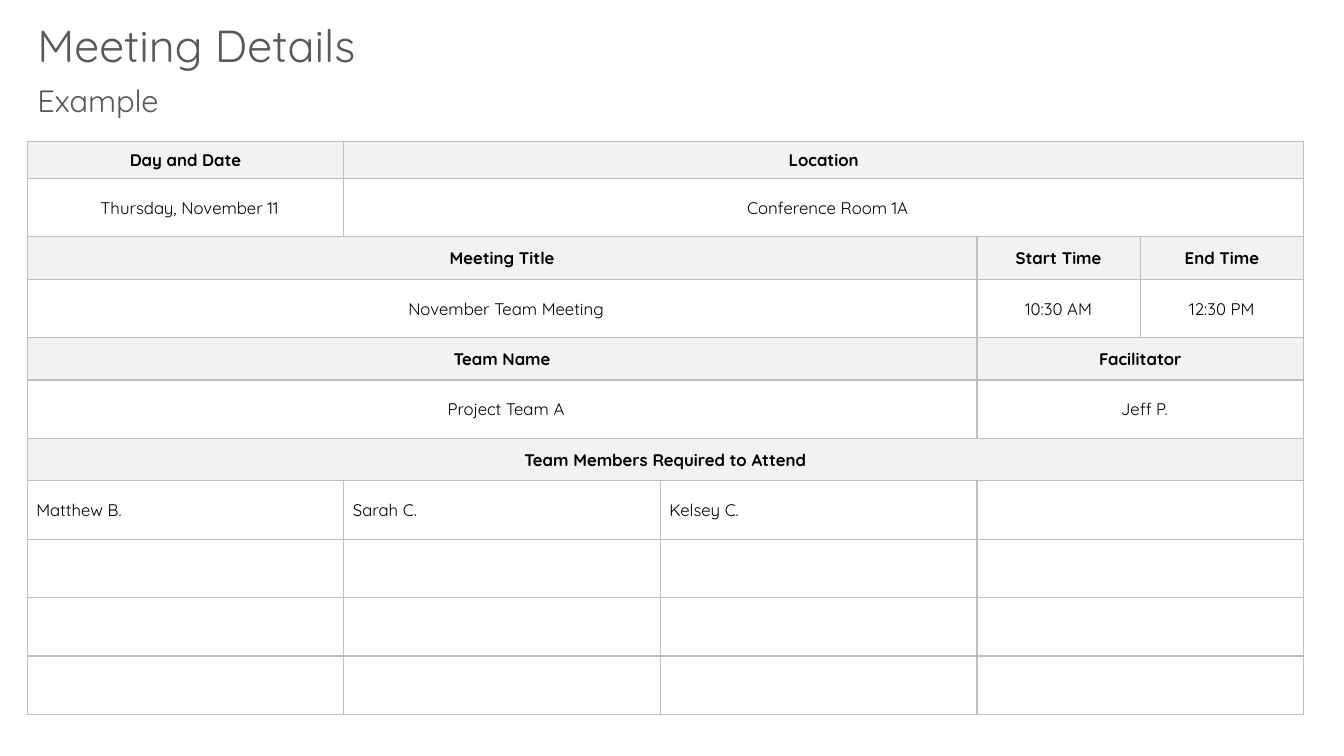
from collections import namedtuple
from dataclasses import dataclass

from lxml import etree
from pptx import Presentation
from pptx import util as u
from pptx.dml.color import RGBColor
from pptx.enum import text
from pptx.oxml.ns import qn

PX = 9144  # EMU in one px, at 100 px to the inch
CENTER, LEFT = text.PP_ALIGN.CENTER, text.PP_ALIGN.LEFT


@dataclass(frozen=True)
class Theme:
    font: str = "Quicksand"
    heading: str = "595959"
    ink: str = "000000"
    band: str = "F2F2F2"
    paper: str = "FFFFFF"
    rule: str = "BFBFBF"
    title_size: int = 32
    subtitle_size: int = 22
    cell_size: int = 12
    rule_width: int = 1


THEME = Theme()
Entry = namedtuple("Entry", "words span kind", defaults=(1, "value"))

COLUMNS = [314, 314, 314, 162, 162]
HEADER_HEIGHT, VALUE_HEIGHT, FIRST_HEIGHT = 42, 58, 37
OPEN_ROWS = 3


def header(words, span=1):
    return Entry(words, span, "header")


def member(words="", span=1):
    return Entry(words, span, "member")


def time(words):
    return Entry(words, 1, "time")


MEETING = [
    [header("Day and Date"), header("Location", 4)],
    [Entry("Thursday, November 11"), Entry("Conference Room 1A", 4)],
    [header("Meeting Title", 3), header("Start Time"), header("End Time")],
    [Entry("November Team Meeting", 3), time("10:30 AM"), time("12:30 PM")],
    [header("Team Name", 3), header("Facilitator", 2)],
    [Entry("Project Team A", 3), Entry("Jeff P.", 2)],
    [header("Team Members Required to Attend", 5)],
    [member("Matthew B."), member("Sarah C."), member("Kelsey C."), member(span=2)],
] + [[member(), member(), member(), member(span=2)]] * OPEN_ROWS


def px(length):
    return u.Emu(length * PX)


def write(frame, words, *, size, color, bold=False, align=LEFT):
    para = frame.paragraphs[0]
    para.alignment = align
    para.space_before = u.Pt(0)
    span = para.add_run()
    span.text = words
    span.font.name = THEME.font
    span.font.size = u.Pt(size)
    span.font.bold = bold
    span.font.color.rgb = RGBColor.from_string(color)


def fill_placeholder(box, words, size, *, left, top, width, height):
    box.left, box.top, box.width, box.height = map(px, (left, top, width, height))
    frame = box.text_frame
    frame.word_wrap = True
    frame.auto_size = text.MSO_AUTO_SIZE.NONE
    frame.vertical_anchor = text.MSO_ANCHOR.MIDDLE
    write(frame, words, size=size, color=THEME.heading)


def add_borders(cell):
    """Rule all four sides; the lines must precede the cell's fill."""
    properties = cell._tc.get_or_add_tcPr()
    for index, side in enumerate(("lnL", "lnR", "lnT", "lnB")):
        line = etree.Element(qn(f"a:{side}"), w=str(u.Pt(THEME.rule_width)))
        solid = etree.SubElement(line, qn("a:solidFill"))
        etree.SubElement(solid, qn("a:srgbClr"), val=THEME.rule)
        properties.insert(index, line)


def fill_cell(cell, entry):
    is_header = entry.kind == "header"
    cell.vertical_anchor = text.MSO_ANCHOR.MIDDLE
    cell.margin_left = px(1 if entry.kind in ("header", "time") else 9)
    cell.margin_top = cell.margin_right = px(1)
    cell.margin_bottom = 0
    cell.fill.solid()
    cell.fill.fore_color.rgb = RGBColor.from_string(
        THEME.band if is_header else THEME.paper)
    if entry.words:
        write(cell.text_frame, entry.words, size=THEME.cell_size, color=THEME.ink,
              bold=is_header, align=LEFT if entry.kind == "member" else CENTER)


def row_height(index, entries):
    if index == 0:
        return FIRST_HEIGHT
    return HEADER_HEIGHT if entries[0].kind == "header" else VALUE_HEIGHT


def add_meeting_table(page, rows, *, left, top):
    heights = [row_height(index, entries) for index, entries in enumerate(rows)]
    table = page.shapes.add_table(
        len(rows), len(COLUMNS), px(left), px(top),
        px(sum(COLUMNS)), px(sum(heights))).table
    table.first_row = table.horz_banding = False
    for column, width in zip(table.columns, COLUMNS):
        column.width = px(width)
    for index, entries in enumerate(rows):
        table.rows[index].height = px(heights[index])
        start = 0
        for entry in entries:
            cell = table.cell(index, start)
            if entry.span > 1:
                cell.merge(table.cell(index, start + entry.span - 1))
            fill_cell(cell, entry)
            start += entry.span
    for cell in table.iter_cells():
        add_borders(cell)


def main():
    deck = Presentation()
    deck.slide_width, deck.slide_height = px(1333), px(750)
    page = deck.slides.add_slide(deck.slide_layouts[0])
    title, subtitle = page.placeholders
    fill_placeholder(title, "Meeting Details", THEME.title_size,
                     left=27, top=12, width=1203, height=64)
    add_meeting_table(page, MEETING, left=27, top=140)
    fill_placeholder(subtitle, "Example", THEME.subtitle_size,
                     left=27, top=76, width=1203, height=47)
    deck.save("out.pptx")


if __name__ == "__main__":
    main()
